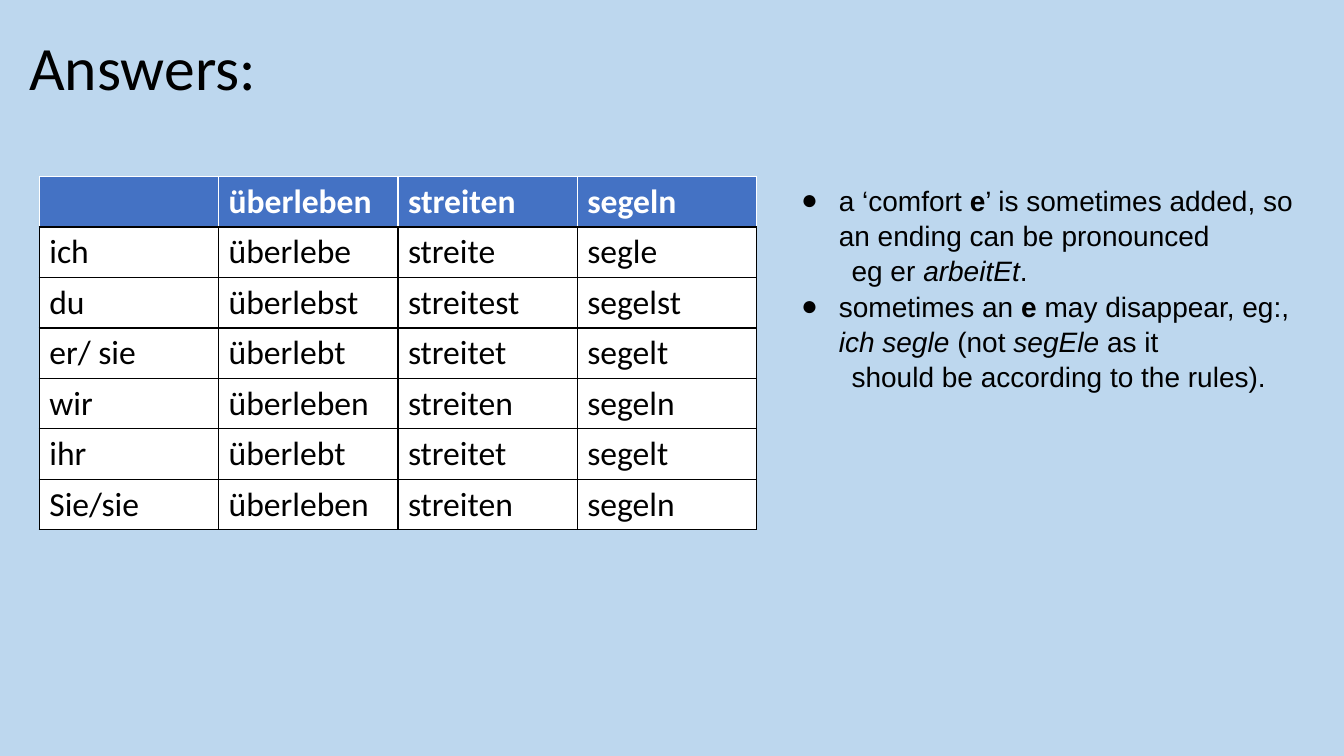
"""Build the German verb conjugation answers slide."""
from dataclasses import dataclass

import lxml.etree
import pptx
import pptx.dml.color
import pptx.enum.text
import pptx.oxml.ns
import pptx.presentation
import pptx.slide
import pptx.table
import pptx.text.text
import pptx.util

Cm = pptx.util.Cm
Pt = pptx.util.Pt
RGBColor = pptx.dml.color.RGBColor
qn = pptx.oxml.ns.qn

SKY = RGBColor(0xBD, 0xD7, 0xEE)
BLUE = RGBColor(0x44, 0x72, 0xC4)
WHITE = RGBColor(0xFF, 0xFF, 0xFF)
BLACK = RGBColor(0x00, 0x00, 0x00)


@dataclass(frozen=True)
class Phrase:
    text: str
    bold: bool = False
    italic: bool = False


@dataclass(frozen=True)
class Note:
    phrases: tuple[Phrase, ...]
    bulleted: bool


@dataclass(frozen=True)
class RowStyle:
    fill: RGBColor
    ink: RGBColor
    bold: bool
    edges: dict[str, RGBColor]


HEADER = RowStyle(BLUE, WHITE, True, {"lnL": WHITE, "lnR": WHITE, "lnT": WHITE, "lnB": BLACK})
BODY = RowStyle(WHITE, BLACK, False, dict.fromkeys(("lnL", "lnR", "lnT", "lnB"), BLACK))

CONJUGATIONS = (
    ("", "überleben", "streiten", "segeln"),
    ("ich", "überlebe", "streite", "segle"),
    ("du", "überlebst", "streitest", "segelst"),
    ("er/ sie", "überlebt", "streitet", "segelt"),
    ("wir", "überleben", "streiten", "segeln"),
    ("ihr", "überlebt", "streitet", "segelt"),
    ("Sie/sie", "überleben", "streiten", "segeln"),
)

NOTES = (
    Note((Phrase("a ‘comfort "), Phrase("e", bold=True),
          Phrase("’ is sometimes added, so an ending can be pronounced")), True),
    Note((Phrase("eg er "), Phrase("arbeitEt", italic=True), Phrase(".")), False),
    Note((Phrase("sometimes an "), Phrase("e", bold=True), Phrase(" may disappear, eg:, "),
          Phrase("ich segle", italic=True), Phrase(" (not "),
          Phrase("segEle", italic=True), Phrase(" as it")), True),
    Note((Phrase("should be according to the rules)."),), False),
)


def format_run(run: pptx.text.text._Run, face: str, size: int, ink: RGBColor,
               bold: bool = False, italic: bool = False) -> None:
    """Set the character format of a run."""
    run.font.name = face
    run.font.size = Pt(size)
    run.font.color.rgb = ink
    run.font.bold = bold
    run.font.italic = italic


def draw_title(slide: pptx.slide.Slide) -> None:
    """Place and format the heading."""
    heading = slide.shapes.title
    heading.left, heading.top, heading.width, heading.height = Cm(0.48), Cm(0.81), Cm(6.63), Cm(1.96)
    frame = heading.text_frame
    frame.text = "Answers:"
    frame.word_wrap = False
    frame.auto_size = pptx.enum.text.MSO_AUTO_SIZE.NONE
    frame.vertical_anchor = pptx.enum.text.MSO_ANCHOR.MIDDLE
    line = frame.paragraphs[0]
    line.alignment = pptx.enum.text.PP_ALIGN.LEFT
    line.line_spacing = 0.9
    format_run(line.runs[0], "Calibri", 44, BLACK)


def draw_cell(cell: pptx.table._Cell, text: str, style: RowStyle) -> None:
    """Fill one table cell and rule its edges."""
    properties = cell._tc.get_or_add_tcPr()
    for edge, color in style.edges.items():
        rule = lxml.etree.SubElement(properties, qn(f"a:{edge}"), w=str(Pt(1)))
        solid = lxml.etree.SubElement(rule, qn("a:solidFill"))
        lxml.etree.SubElement(solid, qn("a:srgbClr"), val=str(color))
    cell.fill.solid()
    cell.fill.fore_color.rgb = style.fill
    cell.text_frame.text = text
    for run in cell.text_frame.paragraphs[0].runs:
        format_run(run, "Calibri", 24, style.ink, style.bold)


def draw_conjugations(slide: pptx.slide.Slide) -> None:
    """Draw the verb table."""
    row_count, column_count = len(CONJUGATIONS), len(CONJUGATIONS[0])
    verbs = slide.shapes.add_table(row_count, column_count, Cm(0.99), Cm(4.45),
                                   column_count * Cm(4.52), row_count * Cm(1.27)).table
    verbs.horz_banding = False
    for row_index, forms in enumerate(CONJUGATIONS):
        style = BODY if row_index else HEADER
        for column_index, form in enumerate(forms):
            draw_cell(verbs.cell(row_index, column_index), form, style)


def draw_notes(slide: pptx.slide.Slide) -> None:
    """Write the spelling rules beside the table."""
    frame = slide.shapes.add_textbox(Cm(19.94), Cm(4.45), Cm(13.13), Cm(5.38)).text_frame
    frame.word_wrap = True
    frame.auto_size = pptx.enum.text.MSO_AUTO_SIZE.SHAPE_TO_FIT_TEXT
    for index, note in enumerate(NOTES):
        line = frame.add_paragraph() if index else frame.paragraphs[0]
        properties = line._p.get_or_add_pPr()
        indent = Cm(0.95) if note.bulleted else Cm(1.27)
        properties.set("marL", str(indent))
        properties.set("indent", str(-indent if note.bulleted else 0))
        if note.bulleted:
            lxml.etree.SubElement(properties, qn("a:buFont"), typeface="Arial")
            lxml.etree.SubElement(properties, qn("a:buChar"), char="●")
        line.line_spacing = 1.05
        for phrase in note.phrases:
            run = line.add_run()
            run.text = phrase.text
            format_run(run, "Arial", 20, BLACK, phrase.bold, phrase.italic)


def main() -> None:
    """Assemble and save the deck."""
    deck: pptx.presentation.Presentation = pptx.Presentation()
    deck.slide_width, deck.slide_height = Cm(33.87), Cm(19.05)
    slide = deck.slides.add_slide(deck.slide_layouts.get_by_name("Title Only"))
    slide.background.fill.solid()
    slide.background.fill.fore_color.rgb = SKY
    draw_title(slide)
    draw_notes(slide)
    draw_conjugations(slide)
    deck.save("out.pptx")


if __name__ == "__main__":
    main()
